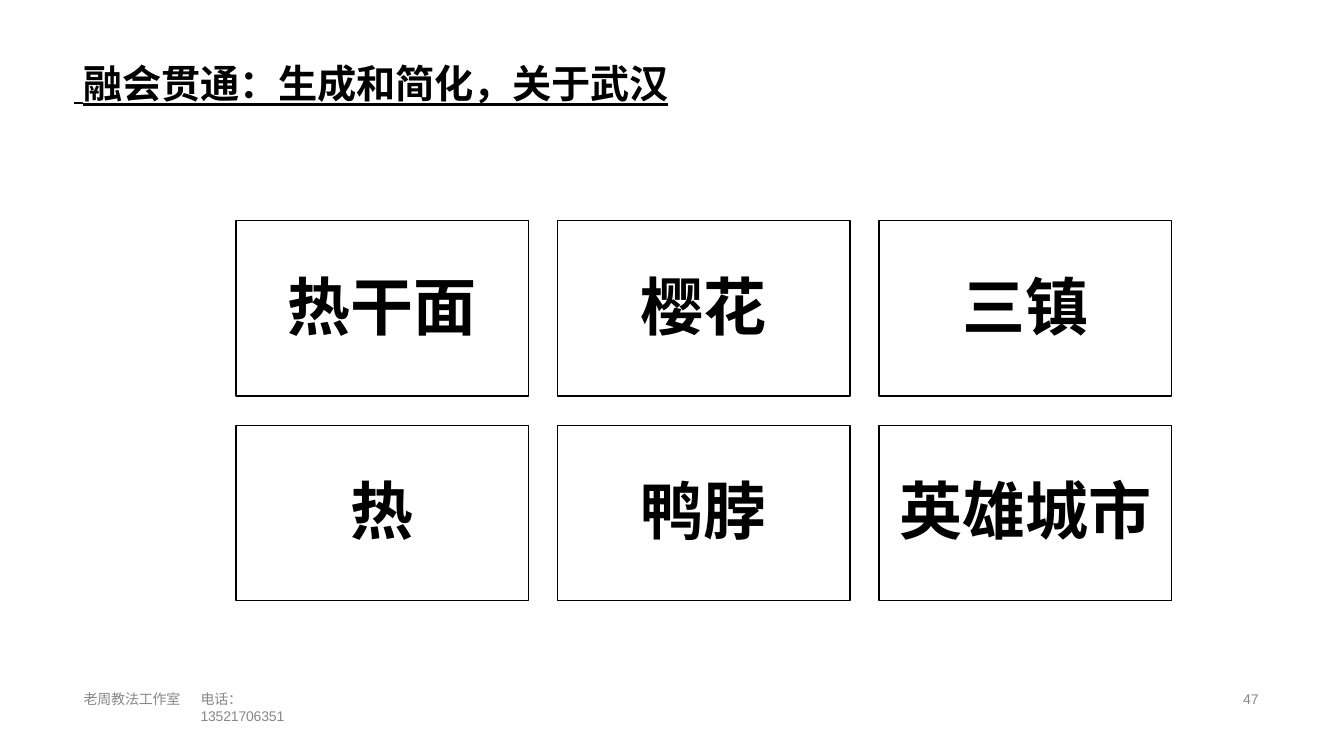
"""Build the Wuhan word-card slide: a title, a grid of six cards and a footer."""
from lxml import etree
from pptx import Presentation
from pptx.dml.color import RGBColor
from pptx.enum.shapes import MSO_SHAPE
from pptx.enum.text import MSO_ANCHOR, PP_ALIGN
from pptx.oxml.ns import qn
from pptx.util import Inches, Pt

RECTANGLE = MSO_SHAPE.RECTANGLE
TOP = MSO_ANCHOR.TOP
LEFT, CENTER = PP_ALIGN.LEFT, PP_ALIGN.CENTER

THEME = {
    "black": RGBColor(0x00, 0x00, 0x00),
    "grey": RGBColor(0x88, 0x88, 0x88),
    "chinese": "Noto Sans CJK SC",
    "latin": "Arial",
    "serif": "Times New Roman",
    "title": Pt(28),
    "card": Pt(45),
    "footer": Pt(10),
    "border": Pt(1),
}

TITLE = [(" ", "serif", False), ("融会贯通：生成和简化，关于武汉", "chinese", True)]
TITLE_BOX = (0.72, 0.58, 11.89, 0.49)
CARDS = [["热干面", "樱花", "三镇"], ["热", "鸭脖", "英雄城市"]]
FOOTERS = [
    ((0.82, 6.83, 1.0, 0.21), 0.02, [("老周教法工作室", "chinese", False)]),
    ((1.98, 6.83, 1.2, 0.21), 0.02,
     [("电话：", "chinese", False), ("13521706351", "latin", False)]),
    ((12.32, 6.85, 0.21, 0.18), 0, [("47", "latin", False)]),
]

GRID_LEFT, GRID_TOP = 2.34, 2.19
CARD_WIDTH, CARD_HEIGHT = 2.9, 1.74
GAP = 0.29
CARD_INSET = 0.46


def write_text(shape, runs, size, color, top=0, indent=0.01, align=LEFT,
               underline=False, spacing=-10):
    """Fill a shape with one paragraph of styled runs."""
    frame = shape.text_frame
    layout = {"word_wrap": True, "vertical_anchor": TOP, "margin_left": Inches(indent),
              "margin_right": 0, "margin_top": Inches(top), "margin_bottom": 0}
    for name, value in layout.items():
        setattr(frame, name, value)
    paragraph = frame.paragraphs[0]
    paragraph.alignment = align
    for text, typeface, bold in runs:
        run = paragraph.add_run()
        run.text = text
        run.font.color.rgb = THEME[color]
        style = {"name": THEME[typeface], "size": THEME[size], "bold": bold,
                 "underline": underline}
        for name, value in style.items():
            setattr(run.font, name, value)
        properties = run._r.get_or_add_rPr()
        properties.set("spc", str(spacing))
        latin = properties.find(qn("a:latin"))
        east_asian = etree.Element(qn("a:ea"), typeface=THEME[typeface])
        latin.addnext(east_asian)


def add_text(slide, box, runs, size, color, **options):
    """Add a text box at the given place."""
    shape = slide.shapes.add_textbox(*map(Inches, box))
    write_text(shape, runs, size, color, **options)


def add_card(slide, row, column, word):
    """Add one outlined card of the grid."""
    left = GRID_LEFT + column * (CARD_WIDTH + GAP)
    top = GRID_TOP + row * (CARD_HEIGHT + GAP)
    box = (left, top, CARD_WIDTH, CARD_HEIGHT)
    card = slide.shapes.add_shape(RECTANGLE, *map(Inches, box))
    card.shadow.inherit = False
    card.fill.background()
    card.line.color.rgb = THEME["black"]
    card.line.width = THEME["border"]
    write_text(card, [(word, "chinese", True)], "card", "black", top=CARD_INSET,
               indent=0, align=CENTER, spacing=0)


def main():
    """Lay out the slide and save it."""
    presentation = Presentation()
    presentation.slide_width = Inches(13.33)
    presentation.slide_height = Inches(7.5)
    slide = presentation.slides.add_slide(presentation.slide_layouts[6])
    add_text(slide, TITLE_BOX, TITLE, "title", "black", top=0.01, underline=True)
    for box, top, runs in FOOTERS:
        add_text(slide, box, runs, "footer", "grey", top=top)
    for row, words in enumerate(CARDS):
        for column, word in enumerate(words):
            add_card(slide, row, column, word)
    presentation.save("out.pptx")


if __name__ == "__main__":
    main()
